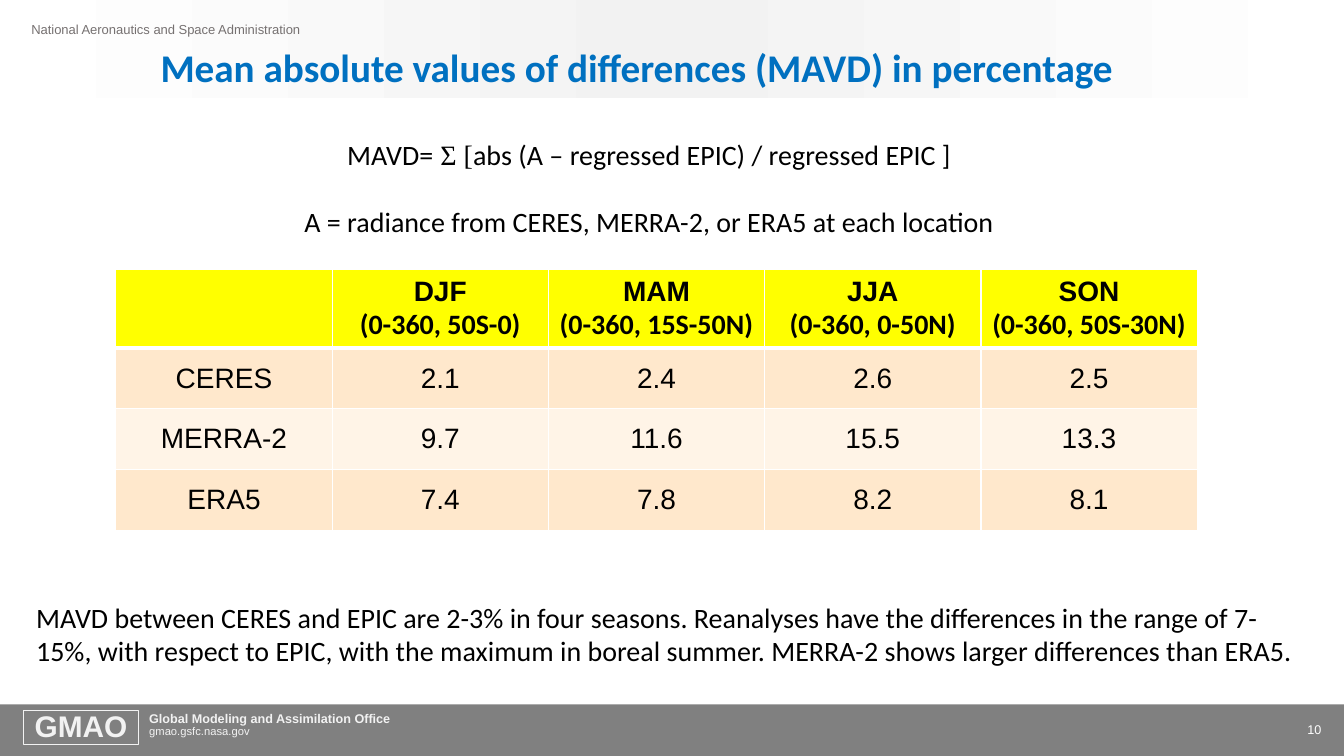
from copy import deepcopy
from lxml.etree import SubElement
from pptx import Presentation
from pptx.dml.color import RGBColor
from pptx.enum.shapes import MSO_SHAPE
from pptx.enum.text import MSO_ANCHOR, MSO_AUTO_SIZE, PP_ALIGN
from pptx.oxml.ns import qn
from pptx.util import Cm, Pt

WHITE = RGBColor(0xFF, 0xFF, 0xFF)
PALE = RGBColor(0xF2, 0xF2, 0xF2)
GREY = RGBColor(0x80, 0x80, 0x80)
DUSK = RGBColor(0x76, 0x71, 0x71)
BLUE = RGBColor(0x00, 0x70, 0xC0)
BLACK = RGBColor(0, 0, 0)
YELLOW = RGBColor(0xFF, 0xFF, 0x00)
PEACH = RGBColor(0xFF, 0xE8, 0xCC)
CREAM = RGBColor(0xFF, 0xF4, 0xE7)

TITLE = "Mean absolute values of differences (MAVD) in percentage"
AGENCY = "National Aeronautics and Space Administration"
OFFICE = "Global Modeling and Assimilation Office"
SITE = "gmao.gsfc.nasa.gov"
BADGE = "GMAO"
PAGE = "10"
SUM = ["MAVD=", " Ʃ [", "abs (A – regressed EPIC) / regressed EPIC ]"]
WHERE = "A = radiance from CERES, MERRA-2, or ERA5 at each location"
FINDING = (
    "MAVD between CERES and EPIC are 2-3% in four seasons. "
    "Reanalyses have the differences in the range of 7-15%, with respect to EPIC, "
    "with the maximum in boreal summer. MERRA-2 shows larger differences than ERA5."
)
HEADS = [
    (),
    ("DJF", "(0-360, 50S-0)"),
    ("MAM", "(0-360, 15S-50N)"),
    ("JJA", "(0-360, 0-50N)"),
    ("SON", "(0-360, 50S-30N)"),
]
ROWS = [
    ("CERES", "2.1", "2.4", "2.6", "2.5"),
    ("MERRA-2", "9.7", "11.6", "15.5", "13.3"),
    ("ERA5", "7.4", "7.8", "8.2", "8.1"),
]

WIDE, HIGH = 33.87, 19.05
COL, HEAD, ROW = 5.45, 1.97, 1.53

BODY = {"name": "Calibri", "size": Pt(20), "color": BLACK, "bold": False}
MATH = BODY | {"name": "Times New Roman"}
CELL = BODY | {"name": "Arial"}
SEASON = CELL | {"bold": True}
RANGE = BODY | {"bold": True}
HEADLINE = RANGE | {"size": Pt(28), "color": BLUE}
TOP = CELL | {"size": Pt(9.3), "color": DUSK}
NAME = SEASON | {"size": Pt(9), "color": PALE}
LINK = CELL | {"size": Pt(8), "color": PALE}
MARK = SEASON | {"size": Pt(21.3), "color": PALE}
COUNT = CELL | {"size": Pt(9), "color": WHITE}


def style(item, form):
    for key, value in form.items():
        if key == "color":
            item.color.rgb = value
        else:
            setattr(item, key, value)


def write(frame, lines, align=PP_ALIGN.LEFT, space=1.0, gap=0):
    for i, line in enumerate(lines):
        para = frame.add_paragraph() if i else frame.paragraphs[0]
        form = {
            "alignment": align,
            "line_spacing": space,
            "space_before": Pt(gap if i else 0),
            "space_after": Pt(0),
        }
        style(para, form)
        for text, font in line:
            run = para.add_run()
            run.text = text
            style(run.font, font)


def set_up(frame, pad=(0.25, 0.13, 0.25, 0.13), anchor=MSO_ANCHOR.TOP):
    left, top, right, low = map(Cm, pad)
    form = {
        "word_wrap": True,
        "auto_size": MSO_AUTO_SIZE.NONE,
        "vertical_anchor": anchor,
        "margin_left": left,
        "margin_top": top,
        "margin_right": right,
        "margin_bottom": low,
    }
    style(frame, form)
    return frame


def place(item, *spot):
    for key, value in zip(("left", "top", "width", "height"), spot):
        setattr(item, key, Cm(value))


def label(spot, **form):
    return set_up(slide.shapes.add_textbox(*map(Cm, spot)).text_frame, **form)


def block(*spot):
    shape = slide.shapes.add_shape(MSO_SHAPE.RECTANGLE, *map(Cm, spot))
    shape.shadow.inherit = False
    shape.line.fill.background()
    return shape


def border(cell, low):
    props = cell._tc.get_or_add_tcPr()
    for i, (side, size) in enumerate({"L": 1, "R": 1, "T": 1, "B": low}.items()):
        line = SubElement(props, qn("a:ln" + side), w=str(Pt(size)))
        fill = SubElement(line, qn("a:solidFill"))
        SubElement(fill, qn("a:srgbClr"), val=str(WHITE))
        props.insert(i, line)


deck = Presentation()
deck.slide_width, deck.slide_height = Cm(WIDE), Cm(HIGH)
slide = deck.slides.add_slide(deck.slide_layouts[1])
title, body = slide.placeholders

banner = block(0, 0, WIDE, 2.46)
banner.fill.gradient()
banner.fill.gradient_angle = 0
stops = banner._element.spPr.find(qn("a:gradFill")).find(qn("a:gsLst"))
stops.append(deepcopy(stops[0]))
for stop, (at, color) in zip(
    banner.fill.gradient_stops, [(0, WHITE), (0.5, PALE), (1, WHITE)]
):
    stop.position = at
    stop.color.rgb = color
slide.shapes._spTree.insert(2, banner._element)

footer = block(0, 17.75, WIDE, 1.3)
footer.fill.solid()
footer.fill.fore_color.rgb = GREY

badge = block(0.58, 17.91, 2.92, 0.86)
badge.fill.background()
badge.line.color.rgb = PALE
badge.line.width = Pt(0.5)
frame = set_up(badge.text_frame, (0, 0, 0, 0), MSO_ANCHOR.MIDDLE)
write(frame, [[(BADGE, MARK)]], PP_ALIGN.CENTER, 0.95)

frame = label((3.76, 17.96, 7.16, 0.66), pad=(0, 0, 0, 0))
write(frame, [[(OFFICE, NAME)], [(SITE, LINK)]], space=0.9)
frame = label((0.41, 0.36, 9.93, 0.86), pad=(0.38, 0.18, 0.38, 0.18))
write(frame, [[(AGENCY, TOP)]])
frame = label((32.08, 17.88, 1.47, 1.02), anchor=MSO_ANCHOR.MIDDLE)
write(frame, [[(PAGE, COUNT)]], PP_ALIGN.RIGHT)

place(title, 0, 1.09, 32.08, 1.47)
frame = set_up(title.text_frame, (0.1, 0, 0.1, 0))
write(frame, [[(TITLE, HEADLINE)]], PP_ALIGN.CENTER)

place(body, 0.66, 14.99, 32.59, 1.96)
props = body.text_frame.paragraphs[0]._p.get_or_add_pPr()
props.set("marL", "0")
props.set("indent", "0")
SubElement(props, qn("a:buNone"))
write(set_up(body.text_frame), [[(FINDING, BODY)]])

frame = label((5.64, 3.33, 21.44, 2.9))
formula = list(zip(SUM, (BODY, MATH, BODY)))
write(frame, [formula, [(WHERE, BODY)]], PP_ALIGN.CENTER, gap=24)

count = len(HEADS)
spot = (2.92, 6.8, COL * count, HEAD + ROW * len(ROWS))
table = slide.shapes.add_table(len(ROWS) + 1, count, *map(Cm, spot)).table
for col in table.columns:
    col.width = Cm(COL)
heads = [[[(t, f)] for t, f in zip(head, (SEASON, RANGE))] for head in HEADS]
grid = [heads] + [[[[(text, CELL)]] for text in row] for row in ROWS]
for r, row in enumerate(grid):
    table.rows[r].height = Cm(ROW if r else HEAD)
    for c, lines in enumerate(row):
        cell = table.cell(r, c)
        cell.vertical_anchor = MSO_ANCHOR.MIDDLE
        cell.fill.solid()
        cell.fill.fore_color.rgb = (PEACH if r % 2 else CREAM) if r else YELLOW
        border(cell, 1 if r else 3)
        write(cell.text_frame, lines, PP_ALIGN.CENTER)

deck.save("out.pptx")
